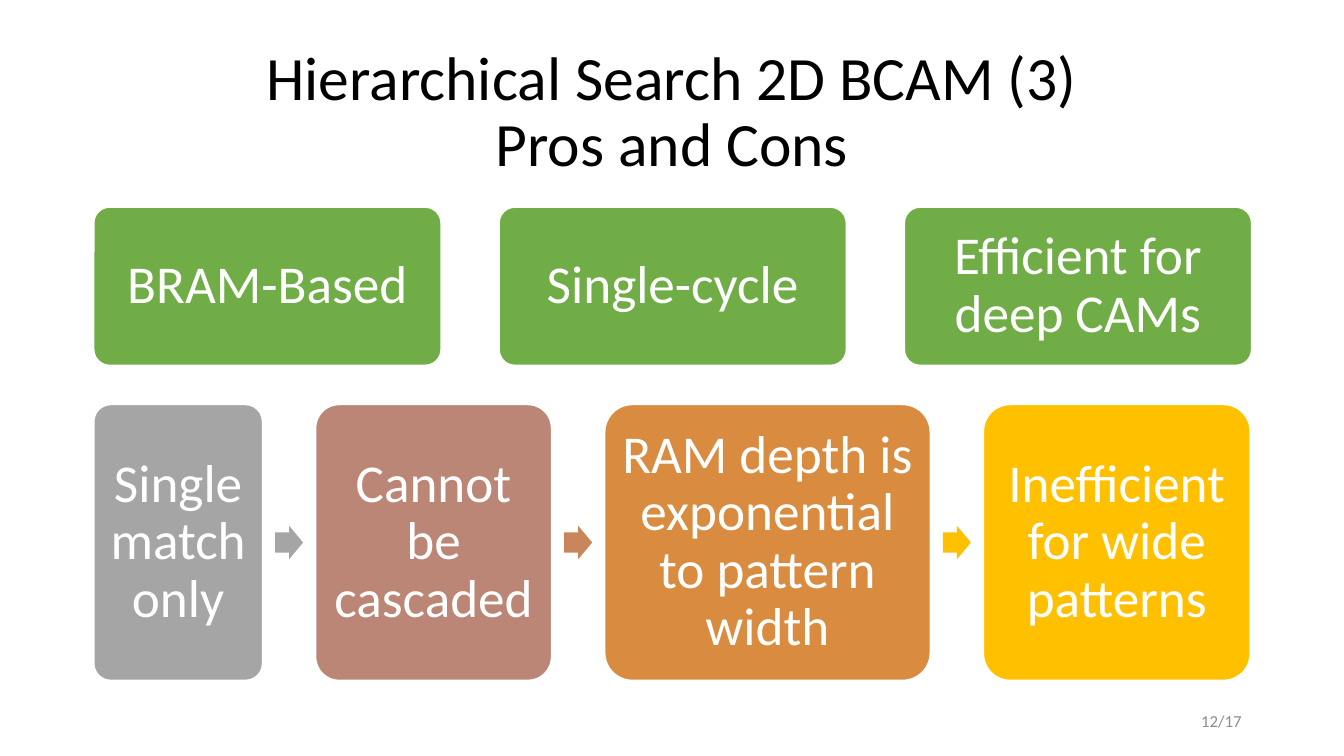
from pptx import Presentation
from pptx.dml.color import RGBColor
from pptx.enum.shapes import MSO_SHAPE
from pptx.enum.text import MSO_ANCHOR, PP_ALIGN
from pptx.util import Pt

HUES = {
    "black": "000000", "white": "FFFFFF", "note": "8C8C8C",
    "green": "70AD47", "gray": "A5A5A5", "rose": "BB8676",
    "clay": "C9865C", "orange": "D98B3F", "gold": "FFC000",
}
LEFT = 67
PROS = ["BRAM-Based", "Single-cycle", "Efficient for deep CAMs"]
CONS = [
    ("Single match only", 120.5, "gray", "gray"),
    ("Cannot be cascaded", 168.5, "rose", "clay"),
    ("RAM depth is exponential to pattern width", 232.5, "orange", "gold"),
    ("Inefficient for wide patterns", 190.5, "gold", None),
]


def hue(name):
    return RGBColor.from_string(HUES[name])


def write(shape, text, size=38, color="white", align=PP_ALIGN.CENTER,
          space=0.9, side=7.2, edge=3.6):
    frame = shape.text_frame
    frame.word_wrap = True
    frame.vertical_anchor = MSO_ANCHOR.MIDDLE
    frame.margin_left = frame.margin_right = Pt(side)
    frame.margin_top = frame.margin_bottom = Pt(edge)
    para = frame.paragraphs[0]
    para.text = text
    para.alignment = align
    para.line_spacing = space
    for part in para.runs:
        part.font.name = "Calibri"
        part.font.size = Pt(size)
        part.font.color.rgb = hue(color)


def label(slide, text, x, y, w, h, **style):
    box = slide.shapes.add_textbox(Pt(x), Pt(y), Pt(w), Pt(h))
    write(box, text, **style)


def block(slide, kind, x, y, w, h, fill):
    shape = slide.shapes.add_shape(kind, Pt(x), Pt(y), Pt(w), Pt(h))
    shape.shadow.inherit = False
    shape.fill.solid()
    shape.fill.fore_color.rgb = hue(fill)
    shape.line.fill.background()
    return shape


def card(slide, text, x, y, w, h, fill, side):
    shape = block(slide, MSO_SHAPE.ROUNDED_RECTANGLE, x, y, w, h, fill)
    shape.adjustments[0] = 0.1
    shape.line.color.rgb = hue("white")
    shape.line.width = Pt(1)
    write(shape, text, side=side, edge=11.5)


def arrow(slide, x, y, fill):
    shape = block(slide, MSO_SHAPE.RIGHT_ARROW, x, y, 20, 24, fill)
    shape.adjustments[0] = 0.6
    shape.adjustments[1] = 0.5


def main():
    deck = Presentation()
    deck.slide_width, deck.slide_height = Pt(960), Pt(540)
    slide = deck.slides.add_slide(deck.slide_layouts[6])

    label(slide, "Hierarchical Search 2D BCAM (3)\vPros and Cons",
          66, 28.8, 828, 104.4, size=44, color="black")
    for i, text in enumerate(PROS):
        card(slide, text, LEFT + i * 289.5, 148, 248, 113, "green", 11.5)

    x = LEFT
    for text, w, fill, tip in CONS:
        card(slide, text, x, 289, w, 197, fill, 5.75)
        if tip:
            arrow(slide, x + w + 9, 375.5, tip)
        x += w + 38

    label(slide, "12/17", 678, 500.5, 216, 28.8, size=12, color="note",
          align=PP_ALIGN.RIGHT, space=1.0)
    deck.save("out.pptx")


if __name__ == "__main__":
    main()
